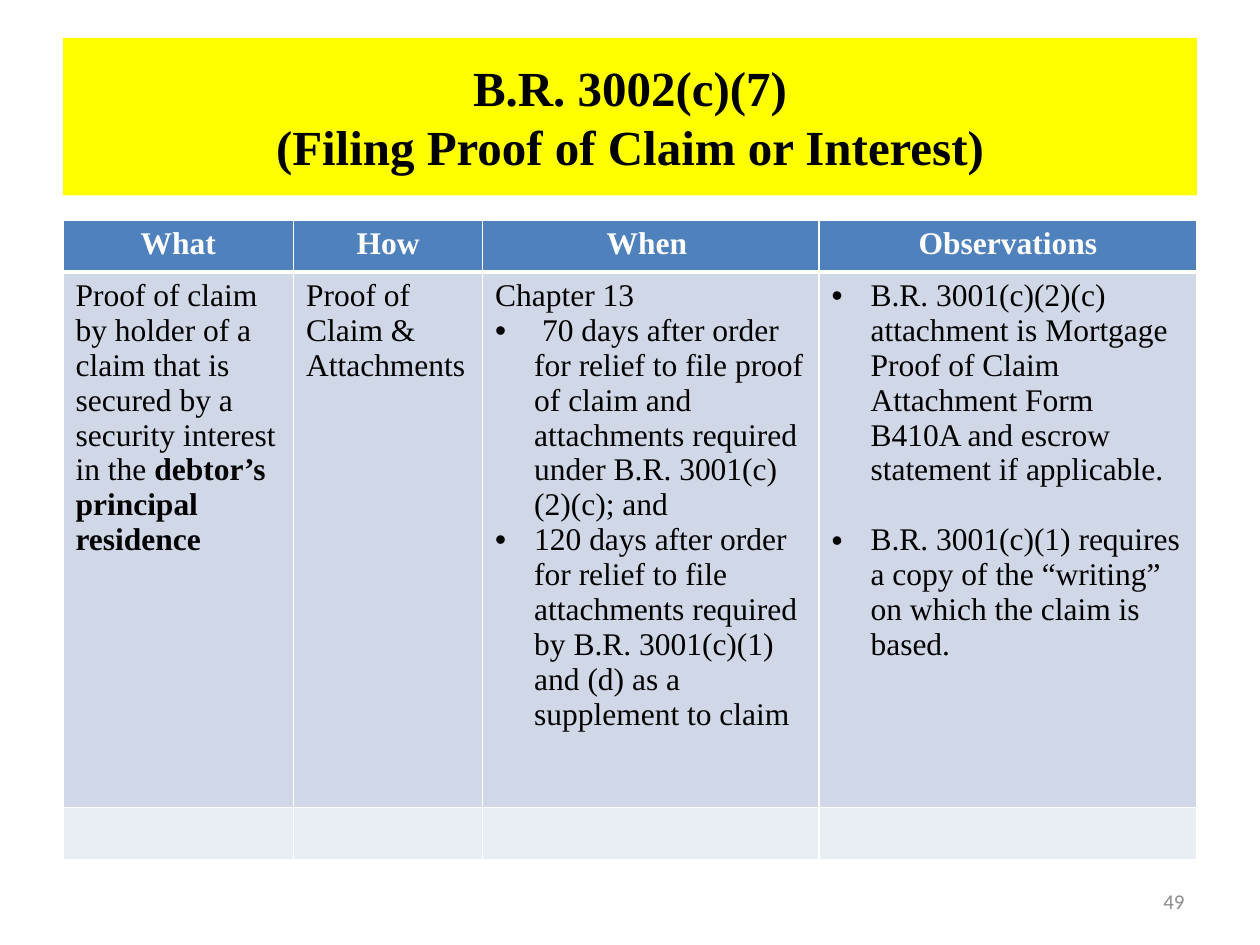
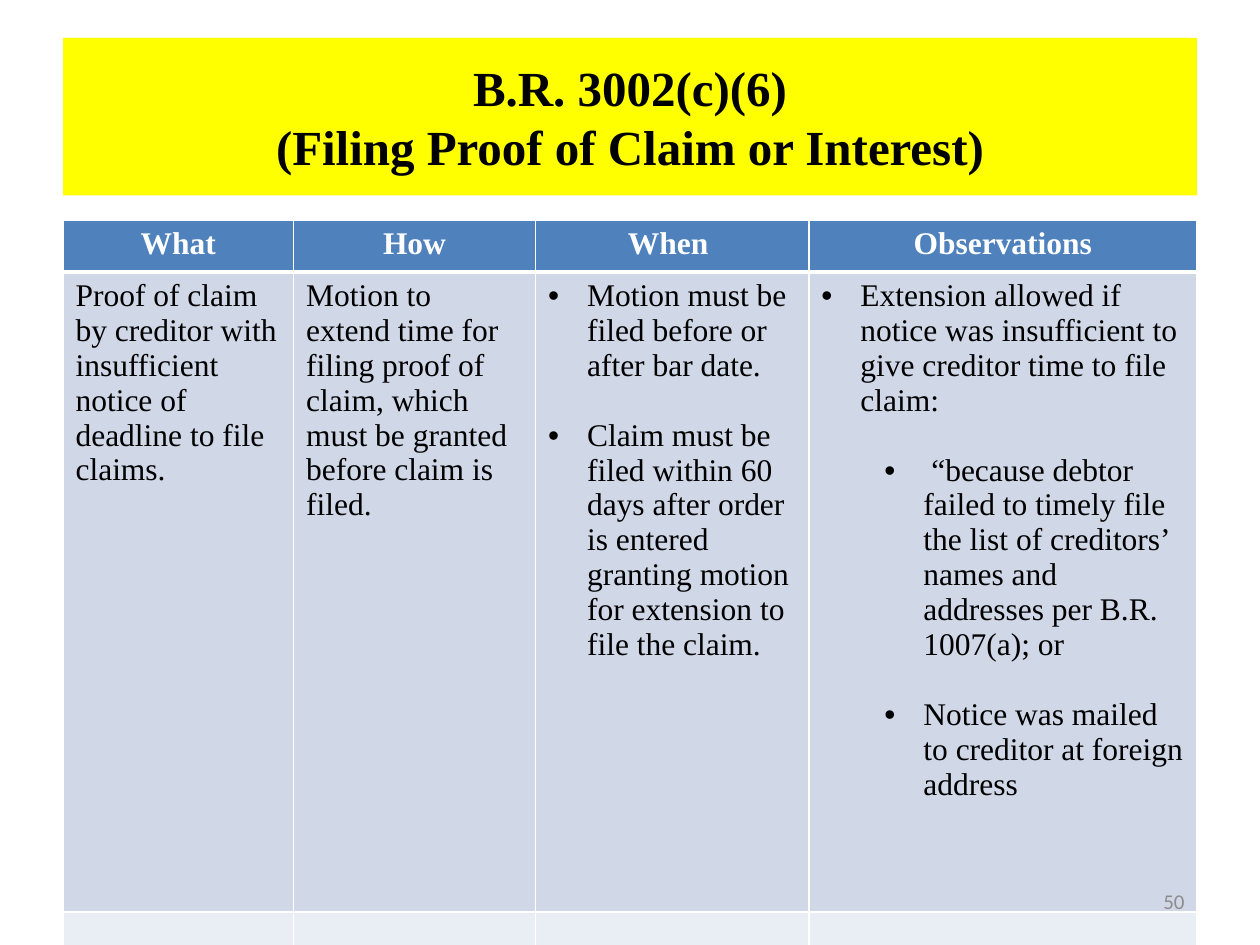
from copy import deepcopy
from dataclasses import dataclass

from lxml import etree
from pptx import Presentation
from pptx.dml.color import RGBColor
from pptx.enum.text import MSO_ANCHOR, MSO_AUTO_SIZE, PP_ALIGN
from pptx.oxml.ns import qn
from pptx.util import Emu, Pt

LEFT, CENTER, RIGHT = PP_ALIGN.LEFT, PP_ALIGN.CENTER, PP_ALIGN.RIGHT
MIDDLE = MSO_ANCHOR.MIDDLE
NO_FIT = MSO_AUTO_SIZE.NONE
TITLE_ONLY = 5
EMU_PER_PX = 9144  # 100 px to the inch


@dataclass(frozen=True)
class Theme:
    serif: str = "Times New Roman"
    sans: str = "Calibri"
    black: str = "000000"
    white: str = "FFFFFF"
    grey: str = "8C8C8C"
    band: str = "FFFF00"
    head: str = "4F81BD"
    body: str = "D0D8E8"
    foot: str = "E9EDF4"
    title_size: int = 28
    table_size: int = 18
    number_size: int = 12
    item_gap: int = 20
    thin: int = 1
    thick: int = 3


@dataclass(frozen=True)
class Item:
    """A table paragraph; level None has no bullet, gap leaves a line above."""
    text: str
    strong: str = ""
    level: int | None = None
    gap: bool = False


def px(n):
    return Emu(n * EMU_PER_PX)


def write(p, text, *, font, size, color, bold=False, align=LEFT):
    """Add text to a paragraph, with a line break at each newline."""
    p.alignment = align
    for i, line in enumerate(text.split("\n")):
        if i:
            p.add_line_break()
            p._p[-1].append(deepcopy(r._r.rPr))
        r = p.add_run()
        r.text = line
        r.font.name, r.font.size, r.font.bold = font, Pt(size), bold
        r.font.color.rgb = RGBColor.from_string(color)


def add_bullet(p, level):
    p.level = level
    pPr = p._p.get_or_add_pPr()
    pPr.set("marL", str(px(31 + 50 * level)))
    pPr.set("indent", str(px(-31)))
    etree.SubElement(pPr, qn("a:buFont"), typeface="Arial")
    etree.SubElement(pPr, qn("a:buChar"), char="•")


def add_border(cell, side, width, color):
    ln = etree.SubElement(cell._tc.get_or_add_tcPr(), qn(f"a:ln{side}"), w=str(Pt(width)))
    fill = etree.SubElement(ln, qn("a:solidFill"))
    etree.SubElement(fill, qn("a:srgbClr"), val=color)


class Deck:
    def __init__(self, theme):
        self.theme = theme
        self.prs = Presentation()
        self.prs.slide_width, self.prs.slide_height = px(1000), px(750)
        self.s = None

    def new_slide(self):
        self.s = self.prs.slides.add_slide(self.prs.slide_layouts[TITLE_ONLY])

    def title(self, text):
        t, sp = self.theme, self.s.shapes.title
        sp.left, sp.top, sp.width, sp.height = px(50), px(30), px(900), px(125)
        sp.fill.solid()
        sp.fill.fore_color.rgb = RGBColor.from_string(t.band)
        tf = sp.text_frame
        tf.auto_size, tf.vertical_anchor = NO_FIT, MIDDLE
        write(tf.paragraphs[0], text, font=t.serif, size=t.title_size,
              color=t.black, bold=True, align=CENTER)

    def style_cell(self, cell, fill, top, bottom):
        t = self.theme
        for side, width in (("L", t.thin), ("R", t.thin), ("T", top), ("B", bottom)):
            add_border(cell, side, width, t.white)
        cell.fill.solid()
        cell.fill.fore_color.rgb = RGBColor.from_string(fill)

    def fill_cell(self, cell, items):
        t = self.theme
        tf = cell.text_frame
        fmt = dict(font=t.serif, size=t.table_size, color=t.black)
        for i, item in enumerate(items):
            p = tf.add_paragraph() if i else tf.paragraphs[0]
            if item.gap:
                p.space_before = Pt(t.item_gap)
            if item.level is not None:
                add_bullet(p, item.level)
            write(p, item.text, **fmt)
            if item.strong:
                write(p, item.strong, bold=True, **fmt)

    def table(self, heads, cells, widths, body_height):
        """Draw a header row, one row of items and an empty closing row."""
        t = self.theme
        heights = (41, body_height, 41)
        tbl = self.s.shapes.add_table(len(heights), len(heads), px(50), px(175),
                                      px(sum(widths)), px(sum(heights))).table
        for col, width in zip(tbl.columns, widths):
            col.width = px(width)
        rows = ((t.head, t.thin, t.thick), (t.body, t.thick, t.thin),
                (t.foot, t.thin, t.thin))
        for row, height, style in zip(tbl.rows, heights, rows):
            row.height = px(height)
            for cell in row.cells:
                self.style_cell(cell, *style)
        for i, (head, items) in enumerate(zip(heads, cells)):
            write(tbl.cell(0, i).text_frame.paragraphs[0], head, font=t.serif,
                  size=t.table_size, color=t.white, bold=True, align=CENTER)
            self.fill_cell(tbl.cell(1, i), items)

    def number(self, n):
        t = self.theme
        tf = self.s.shapes.add_textbox(px(717), px(695), px(233), px(40)).text_frame
        tf.word_wrap, tf.vertical_anchor = True, MIDDLE
        write(tf.paragraphs[0], str(n), font=t.sans, size=t.number_size,
              color=t.grey, align=RIGHT)


HEADS = ("What", "How", "When ", "Observations")

RULES = (
    dict(
        rule="B.R. 3002(c)(7)", number=49, widths=(183, 150, 267, 300), body_height=425,
        cells=(
            [Item("Proof of claim by holder of a claim that is secured by a security "
                  "interest in the ", strong="debtor’s principal residence")],
            [Item("Proof of Claim & Attachments")],
            [Item("Chapter 13"),
             Item(" 70 days after order for relief to file proof of claim and "
                  "attachments required under B.R. 3001(c)(2)(c); and", level=0),
             Item("120 days after order for relief to file attachments required by "
                  "B.R. 3001(c)(1) and (d) as a supplement to claim", level=0)],
            [Item("B.R. 3001(c)(2)(c) attachment is Mortgage Proof of Claim Attachment "
                  "Form B410A and escrow statement if applicable.", level=0),
             Item("B.R. 3001(c)(1) requires a copy of the “writing” on which the claim "
                  "is based.", level=0, gap=True)],
        ),
    ),
    dict(
        rule="B.R. 3002(c)(6)", number=50, widths=(183, 192, 217, 308), body_height=508,
        cells=(
            [Item("Proof of claim by creditor with insufficient notice of deadline to "
                  "file claims.")],
            [Item("Motion to extend time for filing proof of claim, which must be "
                  "granted before claim is filed.")],
            [Item("Motion must be filed before or after bar date.", level=0),
             Item("Claim must be filed within 60 days after order is entered granting "
                  "motion for extension to file the claim.", level=0, gap=True)],
            [Item("Extension allowed if notice was insufficient to give creditor time "
                  "to file claim:", level=0),
             Item(" “because debtor failed to timely file the list of creditors’ names "
                  "and addresses per B.R. 1007(a); or", level=1, gap=True),
             Item("Notice was mailed to creditor at foreign address", level=1, gap=True)],
        ),
    ),
)


def main():
    deck = Deck(Theme())
    for rule in RULES:
        deck.new_slide()
        deck.title(f"{rule['rule']}\n(Filing Proof of Claim or Interest)")
        deck.table(HEADS, rule["cells"], rule["widths"], rule["body_height"])
        deck.number(rule["number"])
    deck.prs.save("out.pptx")


if __name__ == "__main__":
    main()
